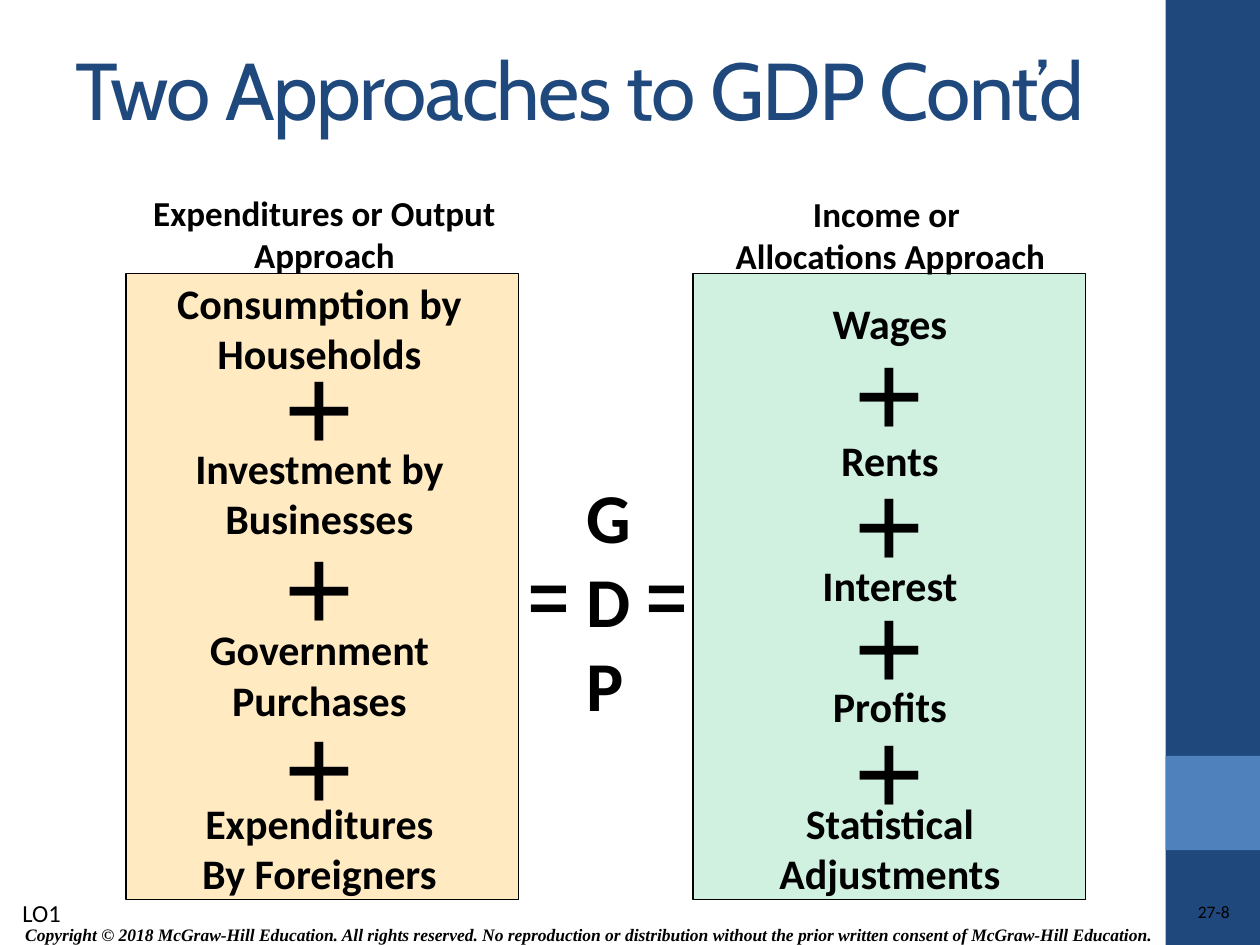
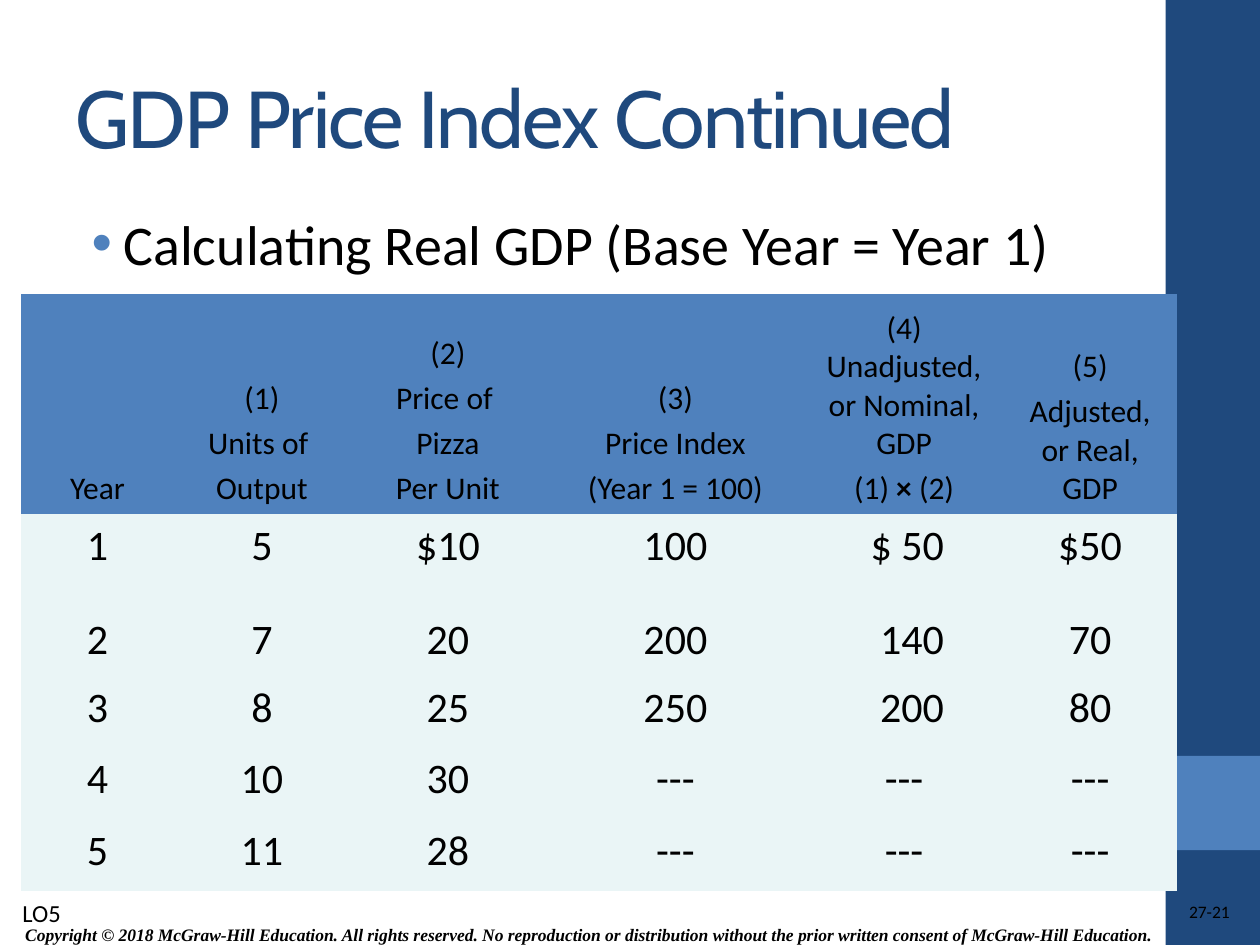
from lxml.etree import SubElement
from pptx import Presentation
from pptx.dml.color import RGBColor
from pptx.enum.shapes import MSO_SHAPE as Preset
from pptx.enum.text import MSO_ANCHOR as Anchor, MSO_AUTO_SIZE as AutoSize, PP_ALIGN as Align
from pptx.oxml.ns import qn
from pptx.util import Cm, Pt

NAVY, BLUE, BLACK = "1F497D", "4F81BD", "000000"
PEACH, MINT, PALE = "FFEAC1", "D0F0E0", "EAF5F6"
NO_GRID_STYLE = "{2D5ABB26-0587-4C30-8999-92F81FD0307C}"
COPYRIGHT = (
    "Copyright © 2018 McGraw-Hill Education. All rights reserved. No reproduction or "
    "distribution without the prior written consent of McGraw-Hill Education."
)
COLUMN_WIDTHS = [3.07, 3.56, 3.94, 5.23, 3.99, 3.51]
ROW_HEIGHTS = [4.45, 1.9, 1.37, 1.42, 1.45, 1.45]
HEADERS = [
    "Year",
    "(1)\nUnits of \nOutput",
    "(2)\nPrice of \nPizza\nPer Unit",
    "(3)\nPrice Index\n(Year 1 = 100)",
    "(4) Unadjusted, or Nominal, GDP\n(1) × (2)",
    "(5)\nAdjusted, or Real, GDP",
]
YEARS = [
    ["1", "5", "$10", "100", "$ 50", "$50"],
    ["2", "7", "20", "200", "140", "70"],
    ["3", "8", "25", "250", "200", "80"],
    ["4", "10", "30", "---", "---", "---"],
    ["5", "11", "28", "---", "---", "---"],
]
NOMINAL_COLUMN = 4


def color(code):
    return RGBColor.from_string(code)


def write(frame, text, *, size, font="Calibri", ink=BLACK, bold=False, italic=False,
          align=Align.LEFT, gap=0, strong=None, tracking=None):
    for number, line in enumerate(text.split("\n")):
        para = frame.paragraphs[0] if number == 0 else frame.add_paragraph()
        para.alignment = align
        if number and gap:
            para.space_before = Pt(gap)
        for piece in line.partition(strong) if strong else [line]:
            if not piece:
                continue
            span = para.add_run()
            span.text = piece
            span.font.name = font
            span.font.size = Pt(size)
            span.font.bold = bold or piece == strong
            span.font.italic = italic
            span.font.color.rgb = color(ink)
            if tracking:
                span.font._element.set("spc", str(tracking))


def add_label(page, text, left, top, width, height, *, wrap=True, inset=None,
              anchor=Anchor.TOP, **style):
    box = page.shapes.add_textbox(Cm(left), Cm(top), Cm(width), Cm(height))
    frame = box.text_frame
    frame.word_wrap = wrap
    frame.vertical_anchor = anchor
    if inset is not None:
        frame.margin_left = frame.margin_right = Cm(inset)
        frame.margin_top = frame.margin_bottom = Cm(inset)
    write(frame, text, **style)
    return box


def add_panel(page, left, top, width, height, fill, line=None):
    panel = page.shapes.add_shape(Preset.RECTANGLE, Cm(left), Cm(top), Cm(width), Cm(height))
    panel.shadow.inherit = False
    panel.fill.solid()
    panel.fill.fore_color.rgb = color(fill)
    if line:
        panel.line.color.rgb = color(line)
        panel.line.width = Pt(0.75)
    else:
        panel.line.fill.background()


def add_page(deck, title, objective, number, top, width, height):
    page = deck.slides.add_slide(deck.slide_layouts[5])
    heading = page.shapes.title
    heading.left, heading.top = Cm(1.27), Cm(top)
    heading.width, heading.height = Cm(width), Cm(height)
    heading.text_frame.auto_size = AutoSize.NONE
    heading.text_frame.vertical_anchor = Anchor.MIDDLE
    write(heading.text_frame, title, size=46, font="Cabin", ink=NAVY, tracking=-100)
    add_panel(page, 23.5, 0, 1.9, 19.05, NAVY)
    add_panel(page, 23.5, 15.24, 1.9, 1.9, BLUE)
    add_label(page, COPYRIGHT, 0.15, 18.49, 23.42, 0.71, wrap=False, anchor=Anchor.MIDDLE,
              size=10, font="Times New Roman", bold=True, italic=True, align=Align.CENTER)
    add_label(page, number, 19.84, 18.16, 4.95, 0.51, inset=0, size=10, align=Align.RIGHT)
    add_label(page, objective, 0.2, 17.98, 1.35, 0.86, size=14)
    return page


def add_approach(page, left, fill, center, terms, plus_tops):
    add_panel(page, left, 5.51, 7.92, 12.62, fill, BLACK)
    for top, term in terms:
        add_label(page, term, center - 3.5, top, 7, 1.24 + 1.05 * term.count("\n"),
                  size=24, bold=True, align=Align.CENTER)
    for top in plus_tops:
        add_label(page, "+", center - 0.98, top, 1.96, 3.3, wrap=False,
                  size=72, font="Times New Roman", bold=True)


def add_bullet(para, ink):
    props = para._p.get_or_add_pPr()
    props.set("marL", str(Cm(0.97)))
    props.set("indent", str(-Cm(0.64)))
    SubElement(SubElement(props, qn("a:buClr")), qn("a:srgbClr")).set("val", ink)
    SubElement(props, qn("a:buSzPct")).set("val", "104000")
    SubElement(props, qn("a:buFont")).set("typeface", "Arial")
    SubElement(props, qn("a:buChar")).set("char", "•")


def fill_cell(cell, text, fill, **style):
    cell.fill.solid()
    cell.fill.fore_color.rgb = color(fill)
    write(cell.text_frame, text, **style)


def add_price_table(page, left, top):
    holder = page.shapes.add_table(len(ROW_HEIGHTS), len(COLUMN_WIDTHS), Cm(left), Cm(top),
                                   Cm(sum(COLUMN_WIDTHS)), Cm(sum(ROW_HEIGHTS)))
    table = holder.table
    table.first_row = table.horz_banding = False
    table._tbl.tblPr.find(qn("a:tableStyleId")).text = NO_GRID_STYLE
    for column, width in zip(table.columns, COLUMN_WIDTHS):
        column.width = Cm(width)
    for row, height in zip(table.rows, ROW_HEIGHTS):
        row.height = Cm(height)
    for column, header in enumerate(HEADERS):
        cell = table.cell(0, column)
        cell.vertical_anchor = Anchor.BOTTOM
        fill_cell(cell, header, BLUE, size=18, align=Align.CENTER, gap=3.7, strong="×")
    for row, values in enumerate(YEARS, 1):
        for column, value in enumerate(values):
            cell = table.cell(row, column)
            align = Align.CENTER
            if column == NOMINAL_COLUMN and value != "---":
                align = Align.RIGHT
                cell.margin_right = Cm(1.19)
            fill_cell(cell, value, PALE, size=24, align=align)


def build_approaches(deck):
    page = add_page(deck, "Two Approaches to GDP Cont’d", "LO1", "27-8", 0, 22.02, 3.56)
    add_approach(page, 2.54, PEACH, 6.44, [
        (5.46, "Consumption by\nHouseholds"),
        (8.79, "Investment by\nBusinesses"),
        (12.45, "Government\nPurchases"),
        (15.95, "Expenditures\nBy Foreigners"),
    ], [6.48 + 3.63 * step for step in range(3)])
    add_approach(page, 13.97, MINT, 17.94, [
        (5.87, "Wages"),
        (8.64, "Rents"),
        (11.15, "Interest"),
        (13.59, "Profits"),
        (15.95, "Statistical\nAdjustments"),
    ], [6.2, 8.84, 11.3, 13.82])
    add_label(page, "G\nD\nP", 11.58, 9.42, 1.42, 5.33, wrap=False, size=40, bold=True)
    for left in (10.41, 12.78):
        add_label(page, "=", left, 11.02, 1.35, 1.96, wrap=False,
                  size=40, font="Arial", bold=True)
    for left, top, width, heading in (
        (2.54, 3.73, 8, "Expenditures or Output Approach"),
        (13.72, 3.76, 8.46, "Income or \nAllocations Approach"),
    ):
        add_label(page, heading, left, top, width, 1.96,
                  size=20, bold=True, align=Align.CENTER)


def build_price_index(deck):
    page = add_page(deck, "GDP Price Index Continued", "LO5", "27-21", 0.76, 21.16, 3.18)
    box = add_label(page, "Calculating Real GDP (Base Year = Year 1)",
                    1.27, 4.09, 21.16, 2.41, size=32)
    add_bullet(box.text_frame.paragraphs[0], BLUE)
    add_price_table(page, 0.43, 5.92)


def main():
    deck = Presentation()
    deck.slide_width, deck.slide_height = Cm(25.4), Cm(19.05)
    build_approaches(deck)
    build_price_index(deck)
    deck.save("out.pptx")


if __name__ == "__main__":
    main()
